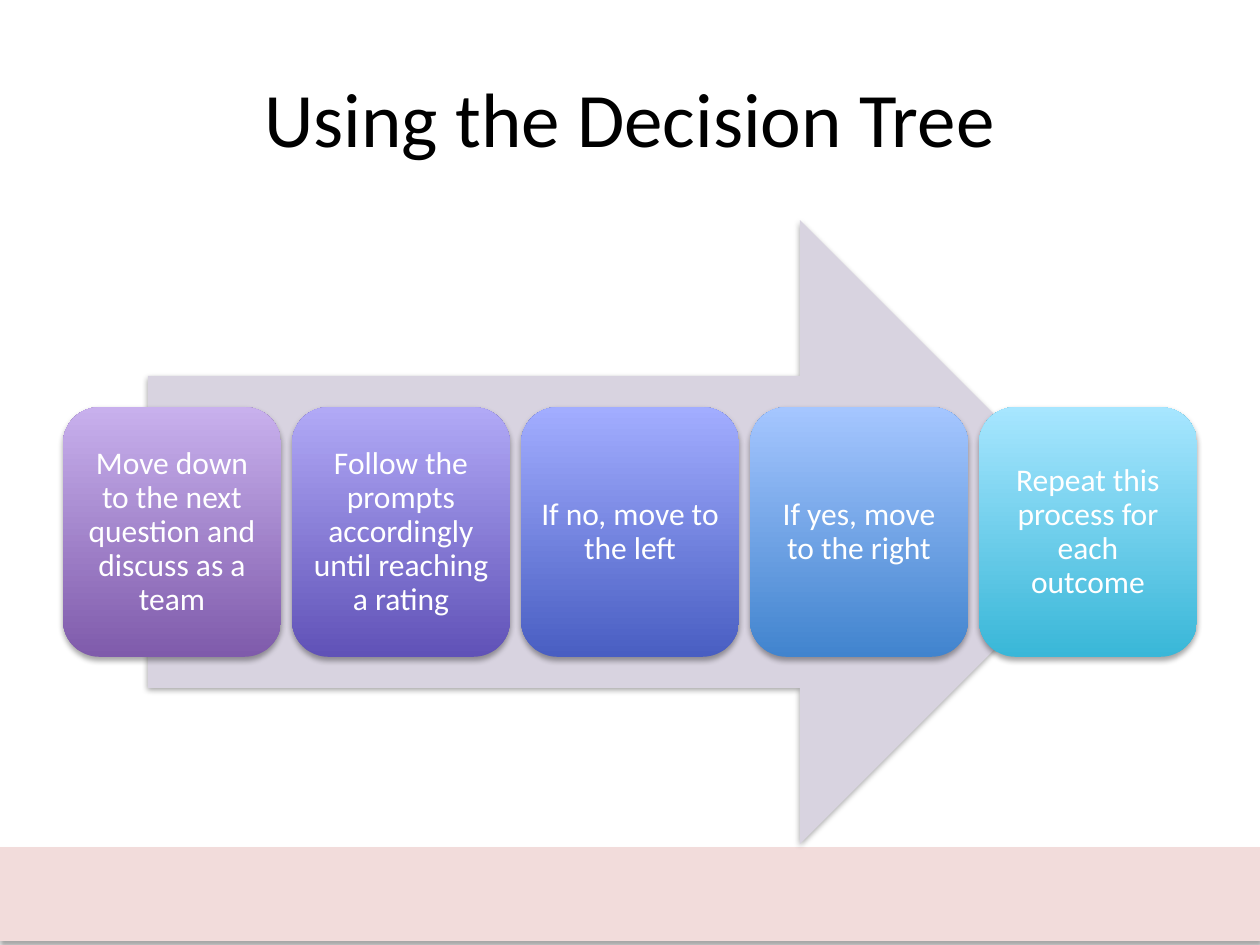
import dataclasses

import lxml.etree
import pptx
import pptx.dml.color
import pptx.enum.shapes
import pptx.enum.text
import pptx.oxml
import pptx.oxml.ns
import pptx.util

PX = 914400 / 126  # EMU in one px
SHAPE = pptx.enum.shapes.MSO_SHAPE
MIDDLE = pptx.enum.text.MSO_ANCHOR.MIDDLE
CENTER = pptx.enum.text.PP_ALIGN.CENTER


@dataclasses.dataclass(frozen=True)
class Theme:
    font: str = "Calibri"
    head: int = 44
    body: int = 18
    ink: str = "000000"
    light: str = "FFFFFF"
    band: str = "F2DCDB"
    arrow: str = "D8D3E0"


THEME = Theme()

# Text, bottom colour, top colour
STEPS = [
    ("Move down to the next question and discuss as a team", "7F5BAB", "C8B0ED"),
    ("Follow the prompts accordingly until reaching a rating", "6052B7", "B1A9F6"),
    ("If no, move to the left", "495EC2", "A2ADFF"),
    ("If yes, move to the right", "4184CE", "A5C6FF"),
    ("Repeat this process for each outcome", "39B7D8", "A7E6FF"),
]


def px(n):
    return pptx.util.Emu(round(n * PX))


def rgb(code):
    return pptx.dml.color.RGBColor.from_string(code)


def cast(shape):
    """Give the shape a soft shadow straight below it."""
    shape.shadow.inherit = False
    effects = shape._element.spPr.find(pptx.oxml.ns.qn("a:effectLst"))
    effects.append(pptx.oxml.parse_xml(
        f'<a:outerShdw {pptx.oxml.ns.nsdecls("a")} blurRad="40000" dist="23000" '
        'dir="5400000" rotWithShape="0"><a:srgbClr val="000000">'
        '<a:alpha val="35000"/></a:srgbClr></a:outerShdw>'))


def add_block(slide, kind, box, fill=None):
    shape = slide.shapes.add_shape(kind, *map(px, box))
    if fill:
        shape.fill.solid()
        shape.fill.fore_color.rgb = rgb(fill)
    shape.line.fill.background()
    cast(shape)
    return shape


def write(shape, text, size, color):
    frame = shape.text_frame
    frame.text = text
    frame.word_wrap = True
    frame.vertical_anchor = MIDDLE
    para = frame.paragraphs[0]
    para.alignment = CENTER
    font = para.runs[0].font
    font.name = THEME.font
    font.size = pptx.util.Pt(size)
    font.color.rgb = rgb(color)
    return frame


def add_band(slide, box):
    band = add_block(slide, SHAPE.RECTANGLE, box, THEME.band)
    band.line.color.rgb = rgb(THEME.band)
    band.line.width = pptx.util.Pt(0.75)


def add_step(slide, box, text, low, high):
    card = add_block(slide, SHAPE.ROUNDED_RECTANGLE, box)
    card.fill.gradient()
    card.fill.gradient_angle = 90
    for stop, color in zip(card.fill.gradient_stops, (low, high)):
        stop.color.rgb = rgb(color)
    for stop, place in zip(card.fill.gradient_stops, (0, 1)):
        stop.position = place
    frame = write(card, text, THEME.body, THEME.light)
    frame.margin_left = frame.margin_right = px(9)
    frame.margin_top = frame.margin_bottom = px(9)
    frame.paragraphs[0].line_spacing = 0.9


def add_flow(slide, box, steps):
    """Lay a row of steps over an arrow, both centred in the box."""
    left, top, width, height = box
    inset = round(width * 0.075)
    add_block(slide, SHAPE.RIGHT_ARROW,
              (left + inset, top, width - 2 * inset, height), THEME.arrow)
    gap = 11
    wide = (width - gap * (len(steps) - 1)) / len(steps)
    tall = height * 0.4
    for i, step in enumerate(steps):
        add_step(slide, (left + i * (wide + gap), top + (height - tall) / 2,
                         wide, tall), *step)


def add_title(slide, box, text):
    title = slide.shapes.title
    title.left, title.top, title.width, title.height = map(px, box)
    write(title, text, THEME.head, THEME.ink)


def main():
    deck = pptx.Presentation()
    deck.slide_width, deck.slide_height = px(1260), px(945)
    slide = deck.slides.add_slide(deck.slide_layouts[5])
    add_band(slide, (0, 848, 1260, 92))
    add_flow(slide, (63, 220, 1134, 624), STEPS)
    add_title(slide, (63, 38, 1134, 157), "Using the Decision Tree")
    deck.save("out.pptx")


if __name__ == "__main__":
    main()
